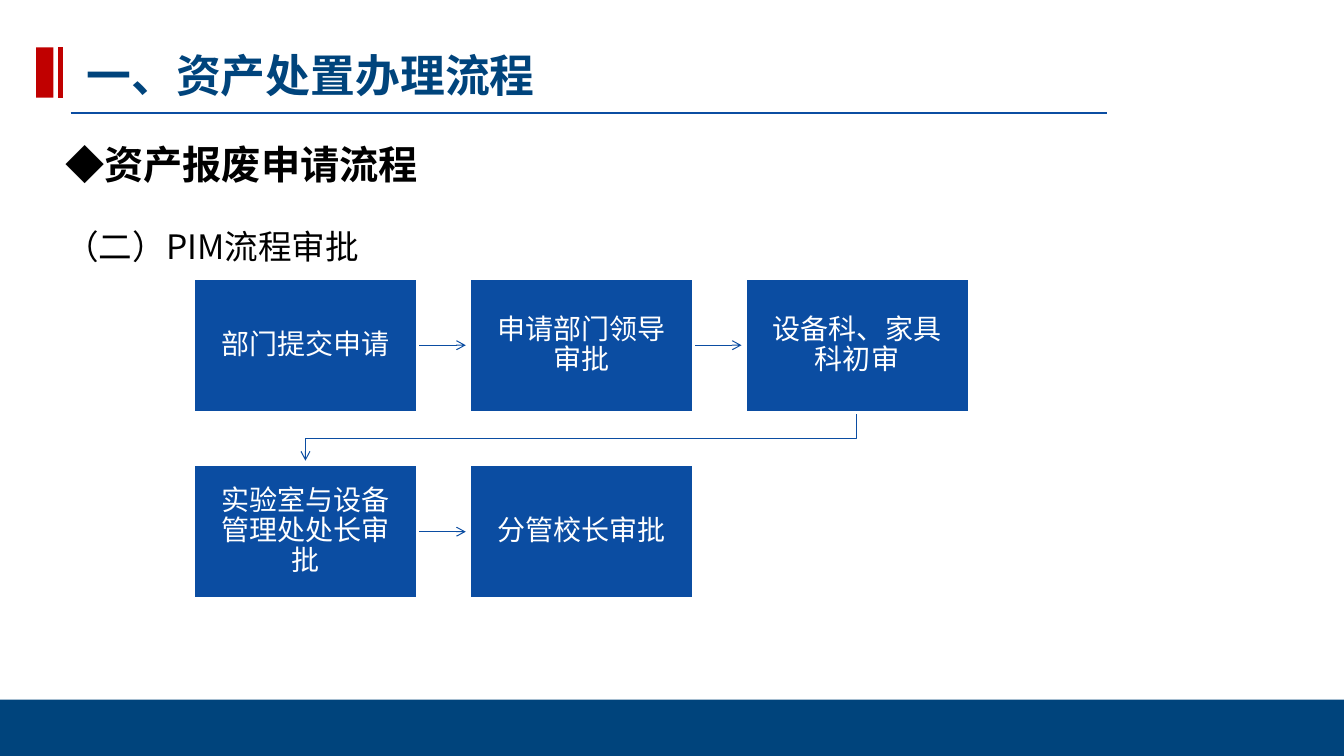
from dataclasses import dataclass
from lxml.etree import SubElement
from pptx import Presentation
from pptx.dml.color import RGBColor
from pptx.enum.shapes import MSO_CONNECTOR, MSO_SHAPE
from pptx.enum.text import MSO_ANCHOR, PP_ALIGN
from pptx.oxml.ns import qn
from pptx.util import Inches, Pt


@dataclass(frozen=True)
class Theme:
    navy: RGBColor = RGBColor(0x00, 0x44, 0x7C)
    blue: RGBColor = RGBColor(0x0B, 0x4D, 0xA2)
    red: RGBColor = RGBColor(0xC0, 0x00, 0x00)
    white: RGBColor = RGBColor(0xFF, 0xFF, 0xFF)
    black: RGBColor = RGBColor(0x00, 0x00, 0x00)
    heading_font: str = "Noto Sans CJK SC"
    step_font: str = "Calibri"
    title_size: int = 32
    heading_size: int = 28
    body_size: int = 24
    step_size: int = 20


THEME = Theme()
STEPS = [
    "部门提交申请",
    "申请部门领导审批",
    "设备科、家具科初审",
    "实验室与设备管理处处长审批",
    "分管校长审批",
]
COLUMNS = 3
STEP_LEFT, STEP_TOP = 1.92, 2.76
STEP_WIDTH, STEP_HEIGHT = 2.22, 1.33
COLUMN_PITCH, ROW_PITCH = 2.735, 1.85
ARROW_LENGTH = 0.48


def style_text(paragraph, size, color, font, bold=False):
    for run in paragraph.runs:
        run.font.size = Pt(size)
        run.font.bold = bold
        run.font.color.rgb = color
        run.font.name = font
        if font == THEME.heading_font:
            SubElement(run.font._element, qn("a:ea")).set("typeface", font)


def add_block(slide, left, top, width, height, color):
    block = slide.shapes.add_shape(
        MSO_SHAPE.RECTANGLE, Inches(left), Inches(top), Inches(width), Inches(height)
    )
    block.shadow.inherit = False
    block.fill.solid()
    block.fill.fore_color.rgb = color
    block.line.fill.background()
    return block


def add_rule(slide, start, end, color, weight):
    rule = slide.shapes.add_connector(
        MSO_CONNECTOR.STRAIGHT, *(Inches(value) for value in (*start, *end))
    )
    rule.line.color.rgb = color
    rule.line.width = Pt(weight)
    SubElement(rule._element.spPr, qn("a:effectLst"))
    return rule


def add_arrowhead(arrow):
    SubElement(arrow.line._get_or_add_ln(), qn("a:tailEnd")).set("type", "arrow")


def add_return_arrow(slide, points):
    start, *rest = [(Inches(x), Inches(y)) for x, y in points]
    builder = slide.shapes.build_freeform(*start)
    builder.add_line_segments(rest, close=False)
    arrow = builder.convert_to_shape()
    arrow.shadow.inherit = False
    arrow.fill.background()
    arrow.line.color.rgb = THEME.blue
    arrow.line.width = Pt(0.75)
    add_arrowhead(arrow)


def add_title(slide, text):
    title = slide.shapes.add_textbox(Inches(0.76), Inches(0.42), Inches(4.7), Inches(0.65))
    frame = title.text_frame
    frame.word_wrap = False
    frame.text = text
    style_text(frame.paragraphs[0], THEME.title_size, THEME.navy, THEME.heading_font, True)


def add_section(slide, heading, subheading):
    section = slide.shapes.add_textbox(Inches(0.55), Inches(1.34), Inches(11.89), Inches(1.78))
    frame = section.text_frame
    frame.word_wrap = True
    frame.text = heading
    stage = frame.add_paragraph()
    stage.text = subheading
    stage.space_before = Pt(28)
    for paragraph in frame.paragraphs:
        paragraph.alignment = PP_ALIGN.JUSTIFY
    style_text(frame.paragraphs[0], THEME.heading_size, THEME.black, THEME.heading_font, True)
    style_text(stage, THEME.body_size, THEME.black, THEME.heading_font)


def step_position(index):
    row, column = divmod(index, COLUMNS)
    return STEP_LEFT + column * COLUMN_PITCH, STEP_TOP + row * ROW_PITCH


def add_step(slide, index, text):
    step = add_block(slide, *step_position(index), STEP_WIDTH, STEP_HEIGHT, THEME.blue)
    step.line.color.rgb = THEME.white
    step.line.width = Pt(2)
    frame = step.text_frame
    frame.word_wrap = True
    frame.vertical_anchor = MSO_ANCHOR.MIDDLE
    frame.margin_left = frame.margin_right = Inches(0.16)
    frame.margin_top = frame.margin_bottom = Inches(0.16)
    frame.text = text
    label = frame.paragraphs[0]
    label.alignment = PP_ALIGN.CENTER
    label.line_spacing = 0.9
    style_text(label, THEME.step_size, THEME.white, THEME.step_font)


def add_step_arrow(slide, index):
    left, top = step_position(index)
    right, middle = left + STEP_WIDTH, top + STEP_HEIGHT / 2
    if (index + 1) % COLUMNS:
        arrow = add_rule(
            slide, (right, middle), (right + ARROW_LENGTH, middle), THEME.blue, 0.75
        )
        add_arrowhead(arrow)
        return
    next_left, next_top = step_position(index + 1)
    start_x, end_x = left + STEP_WIDTH / 2, next_left + STEP_WIDTH / 2
    bottom = top + STEP_HEIGHT
    turn = (bottom + next_top) / 2
    add_return_arrow(
        slide,
        [(start_x, bottom), (start_x, turn), (end_x, turn), (end_x, bottom + ARROW_LENGTH)],
    )


def main():
    presentation = Presentation()
    presentation.slide_width = Inches(13.33)
    presentation.slide_height = Inches(7.5)
    slide = presentation.slides.add_slide(presentation.slide_layouts[6])

    add_block(slide, 0, 6.94, 13.33, 0.56, THEME.navy)
    add_rule(slide, (0.7, 1.12), (10.98, 1.12), THEME.blue, 1.5)
    add_block(slide, 0.36, 0.47, 0.17, 0.5, THEME.red)
    add_rule(slide, (0.6, 0.47), (0.6, 0.97), THEME.red, 3)

    add_section(slide, "◆资产报废申请流程", "（二）PIM流程审批")
    add_title(slide, "一、资产处置办理流程")

    for index, text in enumerate(STEPS):
        if index < len(STEPS) - 1:
            add_step_arrow(slide, index)
        add_step(slide, index, text)

    presentation.save("out.pptx")


if __name__ == "__main__":
    main()
